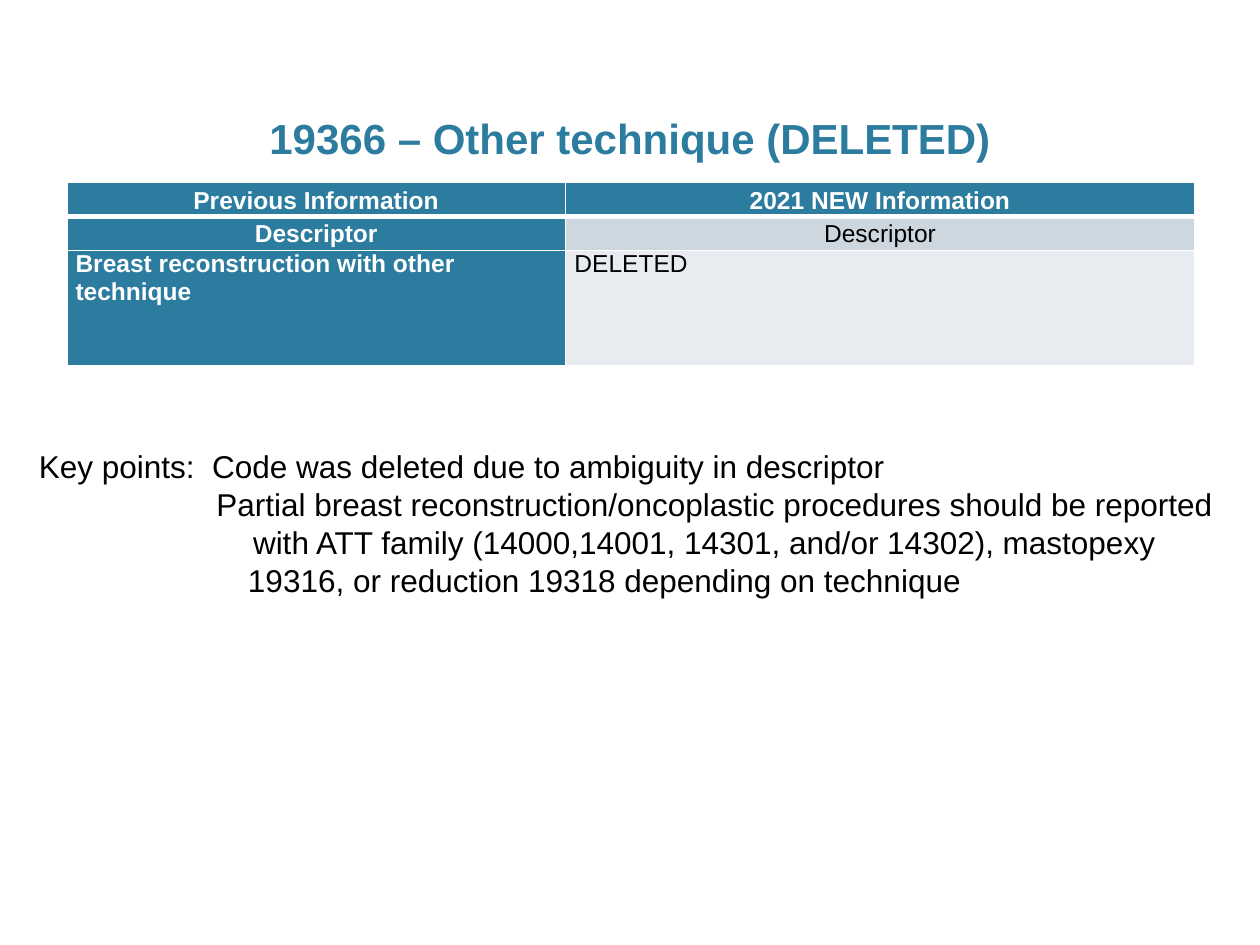
from lxml import etree
from pptx import Presentation
from pptx.dml.color import RGBColor
from pptx.enum.text import MSO_ANCHOR, PP_ALIGN
from pptx.oxml.ns import qn
from pptx.util import Inches, Pt

LEFT, CENTER = PP_ALIGN.LEFT, PP_ALIGN.CENTER
TOP, BOTTOM = MSO_ANCHOR.TOP, MSO_ANCHOR.BOTTOM
FONT = "Arial"
TEAL, WHITE, BLACK = "2C7C9F", "FFFFFF", "000000"

TITLE = "19366 – Other technique (DELETED)"
TABLE_ROWS = [
    ("Previous Information", "2021 NEW Information"),
    ("Descriptor", "Descriptor"),
    ("Breast reconstruction with other technique", "DELETED"),
]
NEW_INFORMATION_FILLS = [TEAL, "CDD7DF", "E8ECF0"]
COLUMN_WIDTHS = [3.96, 4.99]
ROW_HEIGHTS = [0.18, 0.18, 0.92]
KEY_POINTS = [
    (0, "Key points:  Code was deleted due to ambiguity in descriptor"),
    (1.41, "Partial breast reconstruction/oncoplastic procedures should be reported"),
    (1.7, "with ATT family (14000,14001, 14301, and/or 14302), mastopexy"),
    (1.66, "19316, or reduction 19318 depending on technique"),
]


def rgb(color):
    """Turn a hex string into a colour."""
    return RGBColor.from_string(color)


def write(paragraph, text, size, color, bold=False, alignment=LEFT):
    """Add one formatted run to a paragraph."""
    paragraph.alignment = alignment
    run = paragraph.add_run()
    run.text = text
    run.font.name = FONT
    run.font.size = Pt(size)
    run.font.bold = bold
    run.font.color.rgb = rgb(color)


def add_text_frame(slide, box, anchor):
    """Add a wrapping text box and return its frame."""
    frame = slide.shapes.add_textbox(*map(Inches, box)).text_frame
    frame.word_wrap = True
    frame.vertical_anchor = anchor
    return frame


def add_borders(cell, bottom_width):
    """Draw white lines on the four sides of a cell."""
    properties = cell._tc.get_or_add_tcPr()
    for side, width in (("L", 1), ("R", 1), ("T", 1), ("B", bottom_width)):
        line = etree.SubElement(properties, qn(f"a:ln{side}"), w=str(Pt(width)))
        fill = etree.SubElement(line, qn("a:solidFill"))
        etree.SubElement(fill, qn("a:srgbClr"), val=WHITE)


def add_code_table(slide):
    """Add the table comparing previous and new information."""
    frame = slide.shapes.add_table(
        len(ROW_HEIGHTS), len(COLUMN_WIDTHS), Inches(0.53), Inches(1.45),
        Inches(sum(COLUMN_WIDTHS)), Inches(sum(ROW_HEIGHTS)))
    table = frame.table
    for column, width in zip(table.columns, COLUMN_WIDTHS):
        column.width = Inches(width)
    for row, height in zip(table.rows, ROW_HEIGHTS):
        row.height = Inches(height)
    for row_index, texts in enumerate(TABLE_ROWS):
        heading = row_index < 2
        for column_index, text in enumerate(texts):
            cell = table.cell(row_index, column_index)
            fill = NEW_INFORMATION_FILLS[row_index] if column_index else TEAL
            strong = fill == TEAL
            cell.margin_left = cell.margin_right = Inches(0.07)
            cell.margin_top = cell.margin_bottom = 0
            add_borders(cell, 3 if row_index == 0 else 1)
            cell.fill.solid()
            cell.fill.fore_color.rgb = rgb(fill)
            paragraph = cell.text_frame.paragraphs[0]
            if heading:
                paragraph.line_spacing = 1.15
            write(paragraph, text, 14, WHITE if strong else BLACK, strong,
                  CENTER if heading else LEFT)


def add_key_points(slide):
    """Add the key points with their indents."""
    frame = add_text_frame(slide, (0.21, 3.5, 9.79, 1.31), TOP)
    for index, (indent, text) in enumerate(KEY_POINTS):
        paragraph = frame.add_paragraph() if index else frame.paragraphs[0]
        properties = paragraph._p.get_or_add_pPr()
        properties.set("marL", str(Inches(indent)))
        properties.set("indent", "0")
        write(paragraph, text, 18, BLACK)


def main():
    """Build and save the slide."""
    presentation = Presentation()
    presentation.slide_width, presentation.slide_height = Inches(10), Inches(7.5)
    slide = presentation.slides.add_slide(presentation.slide_layouts[6])
    add_key_points(slide)
    title = add_text_frame(slide, (0.6, 0.33, 8.8, 1.01), BOTTOM)
    write(title.paragraphs[0], TITLE, 24, TEAL, True, CENTER)
    add_code_table(slide)
    presentation.save("out.pptx")


if __name__ == "__main__":
    main()
